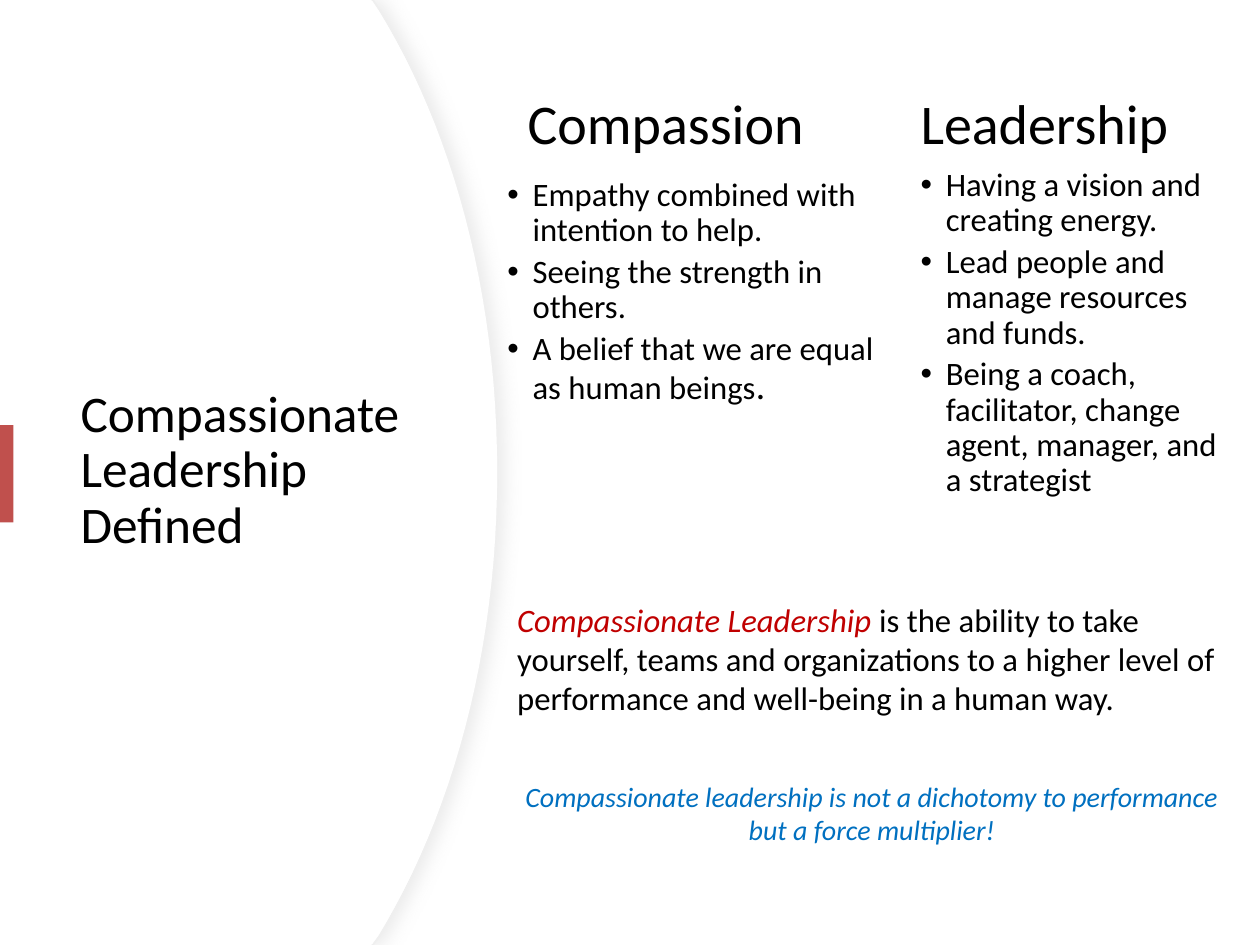
from lxml import etree
from pptx import Presentation
from pptx.dml.color import RGBColor
from pptx.enum.shapes import MSO_SHAPE
from pptx.enum.text import MSO_ANCHOR, MSO_AUTO_SIZE, PP_ALIGN
from pptx.oxml import parse_xml
from pptx.util import Inches, Pt

BLACK = RGBColor(0x00, 0x00, 0x00)
WHITE = RGBColor(0xFF, 0xFF, 0xFF)
EDGE_GRAY = RGBColor(0xEF, 0xEF, 0xEF)
ACCENT_RED = RGBColor(0xC0, 0x50, 0x4D)
TERM_RED = RGBColor(0xC0, 0x00, 0x00)
CLOSING_BLUE = RGBColor(0x00, 0x70, 0xC0)
MIDDLE, TOP = MSO_ANCHOR.MIDDLE, MSO_ANCHOR.TOP
LEFT, CENTER = PP_ALIGN.LEFT, PP_ALIGN.CENTER
NO_AUTOFIT, FIT_SHAPE = MSO_AUTO_SIZE.NONE, MSO_AUTO_SIZE.SHAPE_TO_FIT_TEXT
RECTANGLE = MSO_SHAPE.RECTANGLE
DRAWING = "http://schemas.openxmlformats.org/drawingml/2006/main"
PAGE_WIDTH = 7.5
PAGE_HEIGHT = PAGE_WIDTH * 3 / 4
CURVE_STEPS = 24


def add_run(paragraph, text, size, color=BLACK, italic=False):
    run = paragraph.add_run()
    run.text = text
    formats = {"name": "Calibri", "size": Pt(size), "bold": False, "italic": italic}
    for attribute, value in formats.items():
        setattr(run.font, attribute, value)
    run.font.color.rgb = color


def place(shape, box, anchor=TOP):
    for attribute, value in zip(("left", "top", "width", "height"), box):
        setattr(shape, attribute, Inches(value))
    frame = shape.text_frame
    frame.word_wrap = True
    frame.auto_size = NO_AUTOFIT
    frame.vertical_anchor = anchor
    return frame


presentation = Presentation()
presentation.slide_width = Inches(PAGE_WIDTH)
presentation.slide_height = Inches(PAGE_HEIGHT)
slide = presentation.slides.add_slide(presentation.slide_layouts[4])
shapes = slide.shapes
title, compassion_heading, compassion_list, leadership_heading, leadership_list = slide.placeholders

panels = []
for shoulder in (2.22, 2.21):
    corner = shoulder + 0.04
    curves = [
        ((corner, 0.06), (2.69, 0.76), (2.96, 1.74), (2.96, 2.81)),
        ((2.96, 2.81), (2.96, 3.89), (2.69, 4.86), (corner, 5.57)),
    ]
    outline = [(shoulder, 0), (corner, 0.06)]
    for curve in curves:
        for step in range(1, CURVE_STEPS + 1):
            t = step / CURVE_STEPS
            weights = ((1 - t) ** 3, 3 * t * (1 - t) ** 2, 3 * t ** 2 * (1 - t), t ** 3)
            outline.append(tuple(sum(w * point[axis] for w, point in zip(weights, curve)) for axis in (0, 1)))
    outline += [(shoulder, PAGE_HEIGHT), (0, PAGE_HEIGHT)]
    builder = shapes.build_freeform(0, 0)
    builder.add_line_segments([(Inches(x), Inches(y)) for x, y in outline], close=True)
    panel = builder.convert_to_shape()
    panel.shadow.inherit = False
    panel.fill.solid()
    panel.fill.fore_color.rgb = WHITE
    panel.line.fill.background()
    title.element.addprevious(panel.element)
    panels.append(panel)

edge_panel = panels[0]
edge_panel.line.color.rgb = EDGE_GRAY
edge_panel.line.width = Pt(0.75)
effects = edge_panel.element.spPr.find(f"{{{DRAWING}}}effectLst")
effects.append(parse_xml(
    f'<a:outerShdw xmlns:a="{DRAWING}" blurRad="{Pt(7)}" dist="{Pt(3)}" dir="0" algn="l" rotWithShape="0">'
    '<a:srgbClr val="D9D9D9"><a:alpha val="50000"/></a:srgbClr></a:outerShdw>'
))

accent = shapes.add_shape(RECTANGLE, 0, Inches(2.53), Inches(0.08), Inches(0.58))
accent.shadow.inherit = False
accent.fill.solid()
accent.fill.fore_color.rgb = ACCENT_RED
accent.line.fill.background()
title.element.addnext(accent.element)

headings = [
    (title, (0.38, 0.95, 2.22, 3.71), MIDDLE, "Compassionate Leadership Defined", 22),
    (compassion_heading, (3.04, 0.52, 1.9, 0.27), TOP, "Compassion", 24),
    (leadership_heading, (5.38, 0.52, 1.73, 0.27), TOP, "Leadership", 24),
]
for shape, box, anchor, text, size in headings:
    paragraph = place(shape, box, anchor).paragraphs[0]
    paragraph.alignment = LEFT
    paragraph.line_spacing = 0.9
    paragraph.space_before = Pt(0)
    add_run(paragraph, text, size)

lists = [
    (compassion_list, (2.92, 1.01, 2.48, 1.6), [
        "Empathy combined with intention to help.",
        "Seeing the strength in others.",
        "A belief that we are equal as human beings",
    ]),
    (leadership_list, (5.38, 0.95, 2.04, 3.12), [
        "Having a vision and creating energy.",
        "Lead people and manage resources and funds.",
        "Being a coach, facilitator, change agent, manager, and a strategist",
    ]),
]
for shape, box, items in lists:
    frame = place(shape, box)
    for index, item in enumerate(items):
        paragraph = frame.add_paragraph() if index else frame.paragraphs[0]
        properties = paragraph._p.get_or_add_pPr()
        properties.set("marL", str(Inches(0.15)))
        properties.set("indent", str(-Inches(0.15)))
        bullet = etree.SubElement(properties, f"{{{DRAWING}}}buChar")
        bullet.set("char", "•")
        paragraph.line_spacing = 0.9
        paragraph.space_before = Pt(2.8 if index else 0)
        add_run(paragraph, item, 14)
add_run(compassion_list.text_frame.paragraphs[-1], ".", 16)

definition_box = (2.98, 3.52, 4.42, 1.58)
definition = shapes.add_textbox(*map(Inches, definition_box))
frame = place(definition, definition_box)
frame.auto_size = FIT_SHAPE
paragraph = frame.paragraphs[0]
paragraph.space_after = Pt(26.6)
add_run(paragraph, "Compassionate Leadership ", 14, TERM_RED, True)
add_run(paragraph, "is the ability to take yourself, teams and organizations to a higher level of "
        "performance and well-being in a human way.", 14)
paragraph = frame.add_paragraph()
paragraph.alignment = CENTER
paragraph.space_after = Pt(6)
add_run(paragraph, "Compassionate leadership is not a dichotomy to performance but a force multiplier!",
        12, CLOSING_BLUE, True)

presentation.save("out.pptx")
